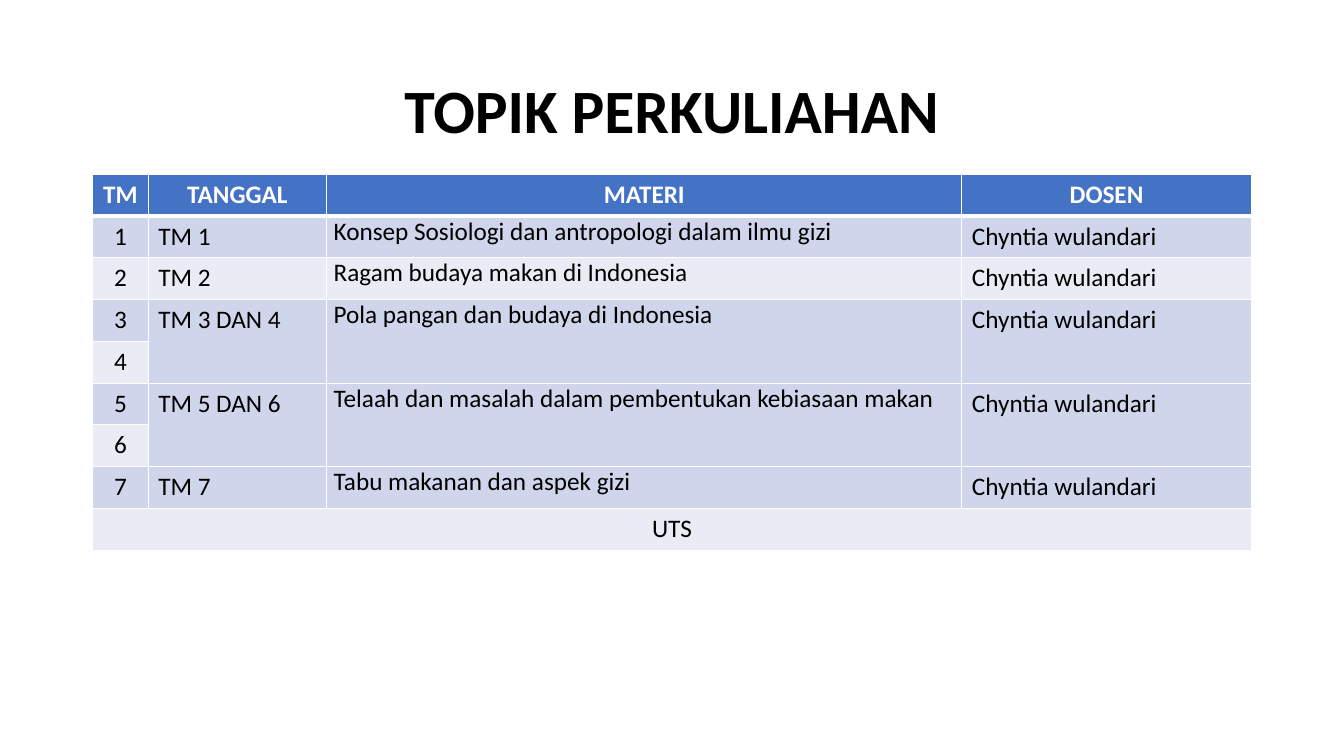
from lxml import etree
from pptx import Presentation
from pptx import util as u
from pptx.dml import color
from pptx.enum import text
from pptx.oxml import ns

TITLE = "TOPIK PERKULIAHAN"
HEADERS = ["TM", "TANGGAL", "MATERI", "DOSEN"]
LECTURER = "Chyntia wulandari"
TOPICS = [
    (["1"], "TM 1", "Konsep Sosiologi dan antropologi dalam ilmu gizi"),
    (["2"], "TM 2", "Ragam budaya makan di Indonesia"),
    (["3", "4"], "TM 3 DAN 4", "Pola pangan dan budaya di Indonesia"),
    (["5", "6"], "TM 5 DAN 6", "Telaah dan masalah dalam pembentukan kebiasaan makan"),
    (["7"], "TM 7", "Tabu makanan dan aspek gizi"),
]
EXAM = "UTS"
COLORS = {"header": "4472C4", "odd": "CFD5EA", "even": "E9EBF5",
          "light": "FFFFFF", "dark": "000000"}
FONT = "Calibri"
WIDTH, HEIGHT = 13.33, 7.5
LEFT, CONTENT_WIDTH = 0.92, 11.49
TABLE_TOP, TABLE_HEIGHT = 1.73, 3.73
COLUMNS = [0.55, 1.77, 6.3, 2.87]
MATERI = HEADERS.index("MATERI")


def style(para, size, ink, bold, centred):
    para.font.name, para.font.size, para.font.bold = FONT, u.Pt(size), bold
    para.font.color.rgb = color.RGBColor.from_string(COLORS[ink])
    para.alignment = text.PP_ALIGN.CENTER if centred else text.PP_ALIGN.LEFT


def add_borders(cell, header):
    properties = cell._tc.get_or_add_tcPr()
    for side in "LRTB":
        points = 3 if header and side == "B" else 1
        line = etree.SubElement(properties, ns.qn(f"a:ln{side}"), w=str(u.Pt(points)))
        fill = etree.SubElement(line, ns.qn("a:solidFill"))
        etree.SubElement(fill, ns.qn("a:srgbClr"), val=COLORS["light"])


def write(cell, words, centred, header=False):
    cell.text = words
    style(cell.text_frame.paragraphs[0], 18, "light" if header else "dark", header, centred)


def main():
    deck = Presentation()
    deck.slide_width, deck.slide_height = u.Inches(WIDTH), u.Inches(HEIGHT)
    page = deck.slides.add_slide(deck.slide_layouts[5])

    title = page.shapes.title
    title.left, title.top = u.Inches(LEFT), u.Inches(0.4)
    title.width, title.height = u.Inches(CONTENT_WIDTH), u.Inches(1.45)
    title.text_frame.text = TITLE
    title.text_frame.vertical_anchor = text.MSO_ANCHOR.MIDDLE
    heading = title.text_frame.paragraphs[0]
    heading.line_spacing = 0.9
    style(heading, 44, "dark", True, True)

    row_count = 2 + sum(len(meetings) for meetings, _, _ in TOPICS)
    table = page.shapes.add_table(
        row_count, len(HEADERS), u.Inches(LEFT), u.Inches(TABLE_TOP),
        u.Inches(CONTENT_WIDTH), u.Inches(TABLE_HEIGHT)).table
    for column, width in zip(table.columns, COLUMNS):
        column.width = u.Inches(width)

    for r in range(row_count):
        band = "header" if r == 0 else "odd" if r % 2 else "even"
        for c in range(len(HEADERS)):
            cell = table.cell(r, c)
            add_borders(cell, r == 0)
            cell.fill.solid()
            cell.fill.fore_color.rgb = color.RGBColor.from_string(COLORS[band])

    for c, words in enumerate(HEADERS):
        write(table.cell(0, c), words, True, header=True)

    row = 1
    for meetings, date, topic in TOPICS:
        last = row + len(meetings) - 1
        for offset, number in enumerate(meetings):
            write(table.cell(row + offset, 0), number, True)
        for c, words in enumerate([date, topic, LECTURER], start=1):
            cell = table.cell(row, c)
            if last > row:
                cell.merge(table.cell(last, c))
            write(cell, words, False)
            if c == MATERI:
                cell.margin_left = cell.margin_right = u.Inches(0.07)
                cell.margin_top = cell.margin_bottom = 0
        row = last + 1

    exam = table.cell(row, 0)
    exam.merge(table.cell(row, len(HEADERS) - 1))
    write(exam, EXAM, True)
    deck.save("out.pptx")


if __name__ == "__main__":
    main()
